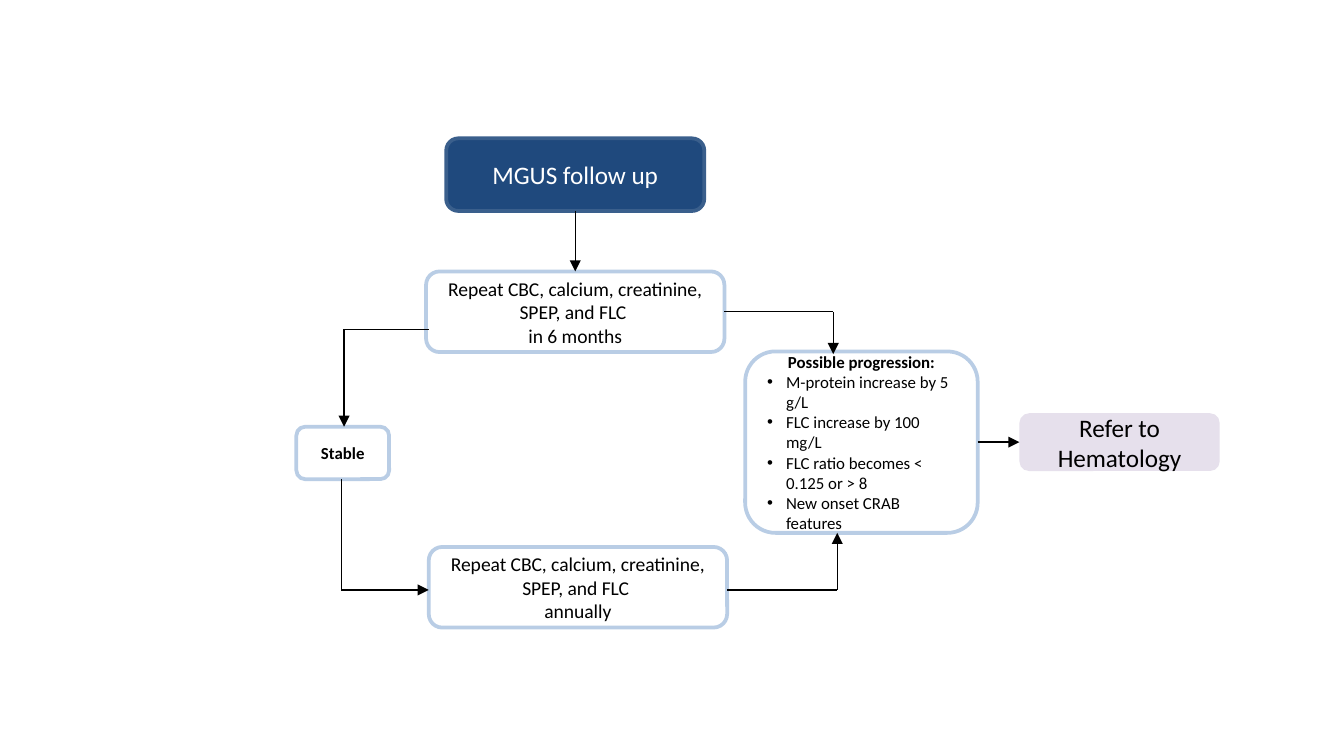
"""Build a one-slide flowchart of MGUS follow-up."""
from dataclasses import dataclass
from itertools import pairwise

from lxml.etree import SubElement
from pptx import Presentation
from pptx.dml.color import RGBColor
from pptx.enum.shapes import MSO_CONNECTOR as Connector, MSO_SHAPE as Shape
from pptx.enum.text import MSO_ANCHOR as Anchor, PP_ALIGN as Align
from pptx.oxml.ns import qn
from pptx.util import Inches, Pt


@dataclass(frozen=True)
class Theme:
    font: str = "Calibri"
    navy: str = "1F497D"
    navy_edge: str = "3A5F8C"
    pale_blue: str = "B9CDE5"
    lilac: str = "E6E0EC"
    white: str = "FFFFFF"
    black: str = "000000"
    large: float = 13.5
    medium: float = 10.5
    small: float = 9
    border: float = 2
    arrow: float = 0.75
    indent: float = 0.14


THEME = Theme()
PAGE_SIZE = (10, 10 * 9 / 16)
COLUMNS = {"stable": 2.55, "main": 4.28, "annual": 4.3, "progression": 6.41, "refer": 8.33}
ROWS = {"start": 1.3, "repeat": 2.32, "action": 3.29, "stable": 3.37, "annual": 4.37}
STYLES = {
    "start": (THEME.navy, THEME.navy_edge, THEME.white, THEME.large),
    "step": (THEME.white, THEME.pale_blue, THEME.black, THEME.medium),
    "result": (THEME.white, THEME.pale_blue, THEME.black, THEME.small),
    "refer": (THEME.lilac, None, THEME.black, THEME.large),
}
TESTS = "Repeat CBC, calcium, creatinine, SPEP, and FLC "
NODES = {
    "start": ("main", "start", 1.92, 0.54, "start", ["MGUS follow up"], []),
    "repeat": ("main", "repeat", 2.22, 0.6, "step", [TESTS, "in 6 months"], []),
    "progression": ("progression", "action", 1.73, 1.35, "result", ["Possible progression:"], [
        "M-protein increase by 5 g/L",
        "FLC increase by 100 mg/L",
        "FLC ratio becomes < 0.125 or > 8",
        "New onset CRAB features",
    ]),
    "stable": ("stable", "stable", 0.69, 0.39, "result", ["Stable"], []),
    "annual": ("annual", "annual", 2.22, 0.6, "step", [TESTS, "annually"], []),
    "refer": ("refer", "action", 1.49, 0.43, "refer", ["Refer to Hematology"], []),
}
LANES = {"stable_in": 2.56, "stable_out": 2.54, "progress_in": 6.2, "annual_out": 6.23}
LEVELS = {"stable_branch": 2.45, "annual": 4.39}


def edges(name):
    column, row, width, height = NODES[name][:4]
    x, y = COLUMNS[column], ROWS[row]
    return {"left": x - width / 2, "right": x + width / 2,
            "top": y - height / 2, "bottom": y + height / 2}


def add_bullet(para):
    props = para._p.get_or_add_pPr()
    props.set("marL", str(Inches(THEME.indent)))
    props.set("indent", str(-Inches(THEME.indent)))
    SubElement(props, qn("a:buFont")).set("typeface", "Arial")
    SubElement(props, qn("a:buChar")).set("char", "•")


def add_node(page, name):
    width, height, style, lines, bullets = NODES[name][2:]
    fill, border, color, size = STYLES[style]
    side = edges(name)
    box = page.shapes.add_shape(Shape.ROUNDED_RECTANGLE, Inches(side["left"]),
                                Inches(side["top"]), Inches(width), Inches(height))
    box.shadow.inherit = False
    box.fill.solid()
    box.fill.fore_color.rgb = RGBColor.from_string(fill)
    if border:
        box.line.color.rgb = RGBColor.from_string(border)
        box.line.width = Pt(THEME.border)
    else:
        box.line.fill.background()
    frame = box.text_frame
    frame.word_wrap = True
    frame.vertical_anchor = Anchor.MIDDLE
    frame.text = "\n".join(lines + bullets)
    for number, para in enumerate(frame.paragraphs):
        is_bullet = number >= len(lines)
        para.alignment = Align.LEFT if is_bullet else Align.CENTER
        if is_bullet:
            add_bullet(para)
        for span in para.runs:
            span.font.name = THEME.font
            span.font.size = Pt(size)
            span.font.bold = style == "result" and not is_bullet
            span.font.color.rgb = RGBColor.from_string(color)


def add_route(page, points):
    for start, end in pairwise(points):
        line = page.shapes.add_connector(Connector.STRAIGHT, *map(Inches, start + end))
        line.line.color.rgb = RGBColor.from_string(THEME.black)
        line.line.width = Pt(THEME.arrow)
        if end == points[-1]:
            SubElement(line.line._get_or_add_ln(), qn("a:tailEnd")).set("type", "triangle")
        SubElement(line._element.spPr, qn("a:effectLst"))


def main():
    deck = Presentation()
    deck.slide_width, deck.slide_height = map(Inches, PAGE_SIZE)
    page = deck.slides.add_slide(deck.slide_layouts[6])
    for name in NODES:
        add_node(page, name)

    side = {name: edges(name) for name in NODES}
    center, middle = COLUMNS["main"], ROWS["action"]
    stable_in, stable_out, progress_in, annual_out = LANES.values()
    branch, annual = LEVELS.values()
    routes = [
        [(center, side["start"]["bottom"]), (center, side["repeat"]["top"])],
        [(side["progression"]["right"], middle), (side["refer"]["left"], middle)],
        [(side["repeat"]["right"], ROWS["repeat"]), (progress_in, ROWS["repeat"]),
         (progress_in, side["progression"]["top"] + 0.02)],
        [(side["annual"]["left"], branch), (stable_in, branch),
         (stable_in, side["stable"]["top"])],
        [(stable_out, side["stable"]["bottom"]), (stable_out, annual),
         (side["annual"]["left"], annual)],
        [(side["annual"]["right"], annual), (annual_out, annual),
         (annual_out, side["progression"]["bottom"])],
    ]
    for points in routes:
        add_route(page, points)
    deck.save("out.pptx")


if __name__ == "__main__":
    main()
